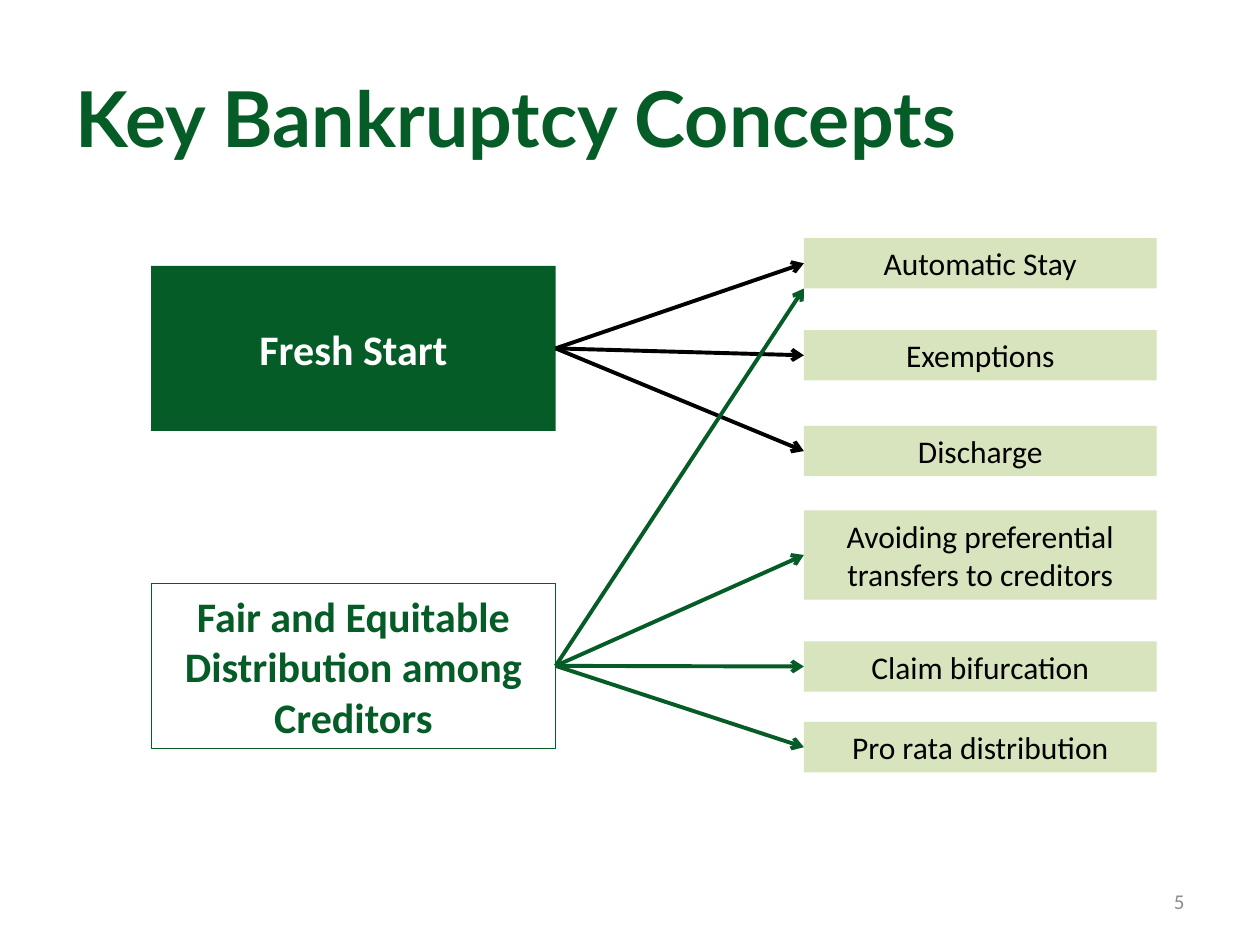
from dataclasses import dataclass

from lxml.etree import SubElement
from pptx import Presentation
from pptx.dml.color import RGBColor
from pptx.enum.shapes import MSO_CONNECTOR as Connector, MSO_SHAPE as Shape
from pptx.enum.text import MSO_ANCHOR as Anchor, PP_ALIGN as Align
from pptx.oxml.ns import qn
from pptx.util import Inches, Pt

GREEN, PALE, WHITE, BLACK, GREY = "065C27", "D7E4BD", "FFFFFF", "000000", "8C8C8C"


@dataclass(frozen=True)
class Block:
    text: str
    left: float
    top: float
    width: float
    height: float
    fill: str
    color: str
    size: int = 18
    bold: bool = False
    line: str | None = None

    @property
    def right(self) -> float:
        return self.left + self.width

    @property
    def bottom(self) -> float:
        return self.top + self.height

    @property
    def middle(self) -> float:
        return self.top + self.height / 2


def goal(text: str, top: float, fill: str, color: str, line: str | None = None) -> Block:
    return Block(text, 1.2, top, 3.21, 1.31, fill, color, 24, True, line)


def tool(text: str, top: float, height: float = 0.4) -> Block:
    return Block(text, 6.38, top, 2.8, height, PALE, BLACK)


FRESH_START = goal("Fresh Start", 2.11, GREEN, WHITE)
FAIR_SHARE = goal("Fair and Equitable Distribution among Creditors", 4.63, WHITE, GREEN, GREEN)
STAY = tool("Automatic Stay", 1.89)
FRESH_TOOLS = [STAY, tool("Exemptions", 2.62), tool("Discharge", 3.38)]
FAIR_TOOLS = [
    tool("Avoiding preferential transfers to creditors", 4.05, 0.71),
    tool("Claim bifurcation", 5.09),
    tool("Pro rata distribution", 5.73),
]


def rgb(value: str) -> RGBColor:
    return RGBColor.from_string(value)


def write(shape, text: str, *, size: int, color: str, font: str = "Calibri",
          bold: bool = False, align=Align.CENTER) -> None:
    """Fill a shape with one formatted, vertically centred paragraph."""
    frame = shape.text_frame
    frame.word_wrap = True
    frame.vertical_anchor = Anchor.MIDDLE
    para = frame.paragraphs[0]
    para.alignment = align
    span = para.add_run()
    span.text = text
    span.font.name = font
    span.font.size = Pt(size)
    span.font.bold = bold
    span.font.color.rgb = rgb(color)


def add_block(page, block: Block) -> None:
    box = page.shapes.add_shape(Shape.RECTANGLE, Inches(block.left), Inches(block.top),
                                Inches(block.width), Inches(block.height))
    box.shadow.inherit = False
    box.fill.solid()
    box.fill.fore_color.rgb = rgb(block.fill)
    if block.line:
        box.line.color.rgb = rgb(block.line)
        box.line.width = Pt(0.75)
    else:
        box.line.fill.background()
    write(box, block.text, size=block.size, color=block.color, bold=block.bold)


def add_arrow(page, start: Block, end: Block, y: float, color: str) -> None:
    arrow = page.shapes.add_connector(Connector.STRAIGHT, Inches(start.right),
                                      Inches(start.middle), Inches(end.left), Inches(y))
    arrow.line.color.rgb = rgb(color)
    arrow.line.width = Pt(2.25)
    SubElement(arrow.line._get_or_add_ln(), qn("a:tailEnd"), type="arrow")
    SubElement(arrow._element.spPr, qn("a:effectLst"))


def main() -> None:
    deck = Presentation()
    deck.slide_width, deck.slide_height = Inches(10), Inches(7.5)
    page = deck.slides.add_slide(deck.slide_layouts[6])

    title = page.shapes.add_textbox(Inches(0.5), Inches(0.3), Inches(9), Inches(1.25))
    write(title, "Key Bankruptcy Concepts", size=44, color=GREEN, font="Lato",
          bold=True, align=Align.LEFT)
    number = page.shapes.add_textbox(Inches(7.17), Inches(6.95), Inches(2.33), Inches(0.4))
    write(number, "5", size=12, color=GREY, align=Align.RIGHT)

    for block in [FRESH_START, FAIR_SHARE, *FRESH_TOOLS, *FAIR_TOOLS]:
        add_block(page, block)
    for block in FRESH_TOOLS:
        add_arrow(page, FRESH_START, block, block.middle, BLACK)
    add_arrow(page, FAIR_SHARE, STAY, STAY.bottom, GREEN)
    for block in FAIR_TOOLS:
        add_arrow(page, FAIR_SHARE, block, block.middle, GREEN)

    deck.save("out.pptx")


if __name__ == "__main__":
    main()
